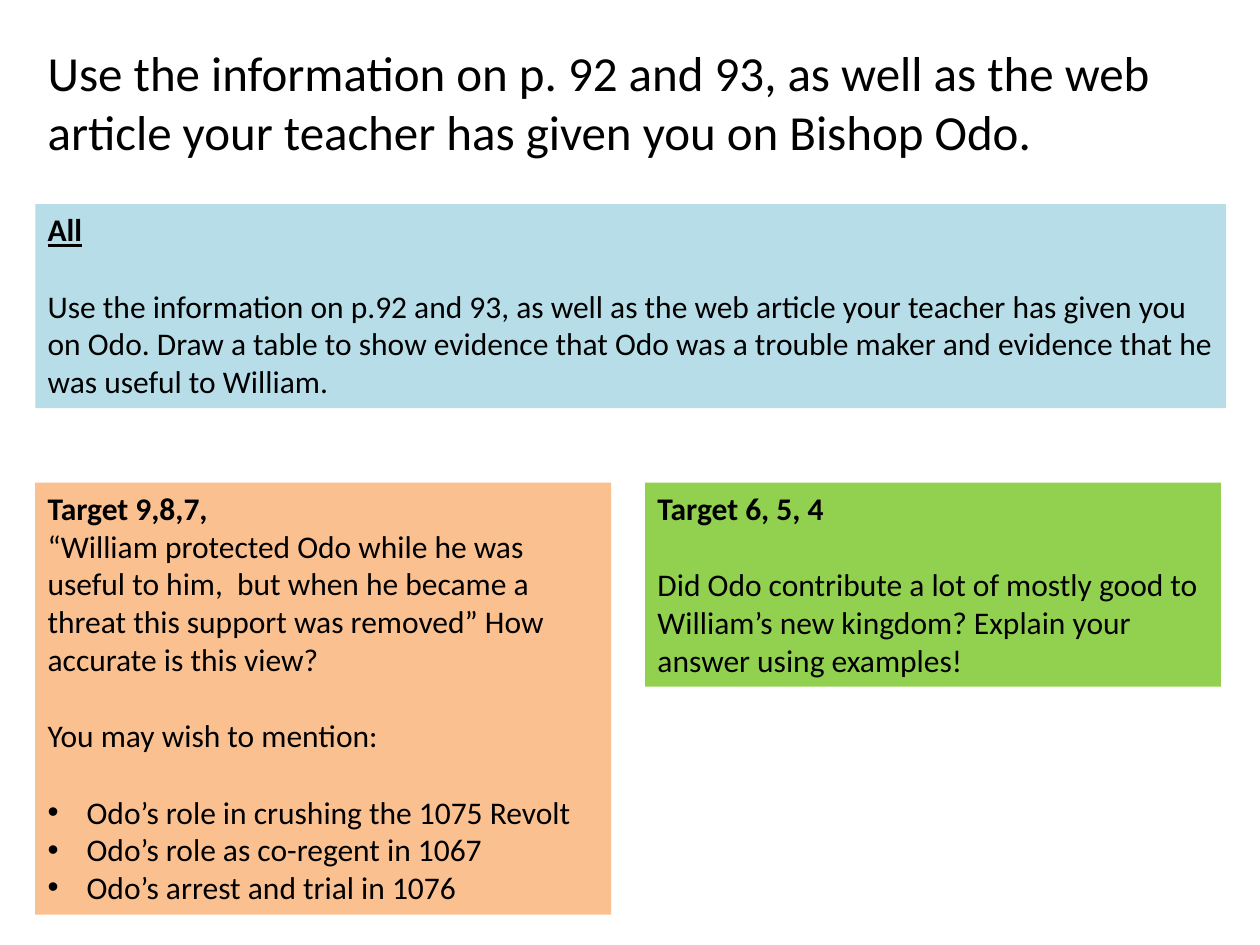
from pptx import Presentation
from pptx.dml.color import RGBColor
from pptx.enum.shapes import MSO_SHAPE
from pptx.enum.text import MSO_ANCHOR, PP_ALIGN
from pptx.oxml.ns import qn
from pptx.util import Inches, Pt
from lxml import etree

LEFT, RIGHT_COLUMN = 0.28, 5.12
FULL_WIDTH, COLUMN_WIDTH = 9.45, 4.57
TARGET_TOP = 3.83
BLANK_LINE = Pt(22)


def color(hex_string):
    return RGBColor.from_string(hex_string)


def style_paragraph(paragraph, text, size=18, bold=False, underline=False):
    paragraph.text = text
    paragraph.alignment = PP_ALIGN.LEFT
    font = paragraph.font
    font.name = "Calibri"
    font.size = Pt(size)
    font.bold = bold
    font.underline = underline
    font.color.rgb = color("000000")


def add_bullet(paragraph):
    properties = paragraph._p.get_or_add_pPr()
    properties.set("marL", str(Inches(0.31)))
    properties.set("indent", str(-Inches(0.31)))
    bullet_font = etree.Element(qn("a:buFont"), typeface="Arial")
    bullet = etree.Element(qn("a:buChar"), char="•")
    properties.insert(0, bullet_font)
    bullet_font.addnext(bullet)


def add_heading(slide, text):
    box = slide.shapes.add_textbox(
        Inches(LEFT), Inches(0.29), Inches(FULL_WIDTH), Inches(1.04))
    box.text_frame.word_wrap = True
    style_paragraph(box.text_frame.paragraphs[0], text, size=28)


def add_task_box(slide, left, top, width, height, fill, title, body,
                 underline=False, title_gap=True, bullets=()):
    """Add a filled box: bold title, body paragraphs, then bullets."""
    shape = slide.shapes.add_shape(
        MSO_SHAPE.RECTANGLE, Inches(left), Inches(top), Inches(width), Inches(height))
    shape.shadow.inherit = False
    shape.fill.solid()
    shape.fill.fore_color.rgb = color(fill)
    shape.line.fill.background()

    frame = shape.text_frame
    frame.word_wrap = True
    frame.vertical_anchor = MSO_ANCHOR.TOP
    heading = frame.paragraphs[0]
    style_paragraph(heading, title, bold=True, underline=underline)
    if title_gap:
        heading.space_after = BLANK_LINE
    for index, text in enumerate(body):
        paragraph = frame.add_paragraph()
        style_paragraph(paragraph, text)
        if bullets or index < len(body) - 1:
            paragraph.space_after = BLANK_LINE
    for text in bullets:
        paragraph = frame.add_paragraph()
        style_paragraph(paragraph, text)
        add_bullet(paragraph)


def main():
    presentation = Presentation()
    presentation.slide_width = Inches(10)
    presentation.slide_height = Inches(7.5)
    slide = presentation.slides.add_slide(presentation.slide_layouts[6])

    add_task_box(
        slide, LEFT, 1.62, FULL_WIDTH, 1.62, "B7DEE8", "All",
        ["Use the information on p.92 and 93, as well as the web article your "
         "teacher has given you on Odo. Draw a table to show evidence that Odo was "
         "a trouble maker and evidence that he was useful to William."],
        underline=True)
    add_task_box(
        slide, LEFT, TARGET_TOP, COLUMN_WIDTH, 3.43, "FAC090", "Target 9,8,7,",
        ["“William protected Odo while he was useful to him,  but when he became a "
         "threat this support was removed” How accurate is this view?",
         "You may wish to mention:"],
        title_gap=False,
        bullets=["Odo’s role in crushing the 1075 Revolt",
                 "Odo’s role as co-regent in 1067",
                 "Odo’s arrest and trial in 1076"])
    add_heading(
        slide, "Use the information on p. 92 and 93, as well as the web article "
               "your teacher has given you on Bishop Odo.")
    add_task_box(
        slide, RIGHT_COLUMN, TARGET_TOP, COLUMN_WIDTH, 1.62, "92D050", "Target 6, 5, 4",
        ["Did Odo contribute a lot of mostly good to William’s new kingdom? "
         "Explain your answer using examples!"])

    presentation.save("out.pptx")


if __name__ == "__main__":
    main()
